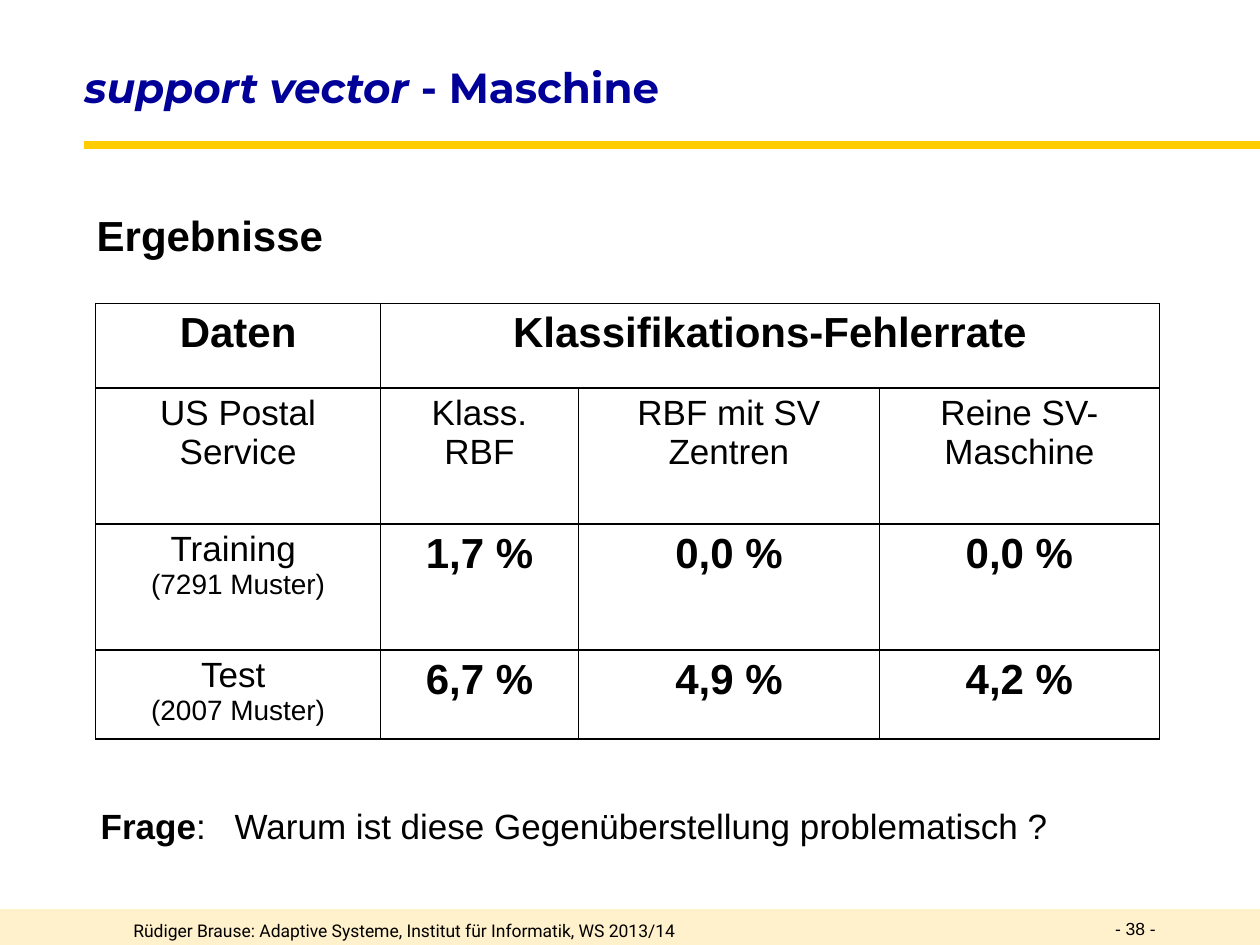
from lxml.etree import SubElement
from pptx import Presentation
from pptx.dml.color import RGBColor
from pptx.enum.shapes import MSO_CONNECTOR, MSO_SHAPE
from pptx.enum.text import PP_ALIGN
from pptx.oxml import parse_xml
from pptx.oxml.ns import nsdecls, qn
from pptx.util import Cm, Pt


def color(code):
    return RGBColor.from_string(code)


def add_text(box, runs, size, face="Arial", tint="000000"):
    """Place a one-paragraph text box; runs are (text, bold, italic)."""
    frame = slide.shapes.add_textbox(*[Cm(n) for n in box]).text_frame
    frame.word_wrap = True
    line = frame.paragraphs[0]
    for words, bold, slant in runs:
        run = line.add_run()
        run.text = words
        font = run.font
        font.name, font.size = face, Pt(size)
        font.bold, font.italic = bold, slant
        font.color.rgb = color(tint)
    return frame


deck = Presentation()
deck.slide_width, deck.slide_height = Cm(25.4), Cm(19.05)
slide = deck.slides.add_slide(deck.slide_layouts[6])

# Footer band, half transparent
band = slide.shapes.add_shape(MSO_SHAPE.RECTANGLE, 0, Cm(18.33), Cm(25.4), Cm(0.72))
band.shadow.inherit = False
band.fill.solid()
band.fill.fore_color.rgb = color("FFE499")
band.line.fill.background()
tone = band.fill._xPr.find(qn("a:solidFill"))[0]
SubElement(tone, qn("a:alpha"), val="50000")

# Rule under the title
rule = slide.shapes.add_connector(
    MSO_CONNECTOR.STRAIGHT, Cm(1.7), Cm(2.92), Cm(25.4), Cm(2.92))
rule.line.color.rgb = color("FFCC00")
rule.line.width = Pt(4.5)
SubElement(rule._element.spPr, qn("a:effectLst"))

# Title and heading
title = add_text((1.7, 1.12, 18.39, 1.4),
                 [("support vector", True, True), (" - Maschine", True, False)],
                 24, "Montserrat", "000099")
title.margin_left = 0
title.word_wrap = False
head = add_text((1.7, 3.53, 23.7, 14.4), [("Ergebnisse", True, False)], 24)
head.margin_top = Cm(0.7)

# Footer text
add_text((2.44, 18.42, 13.77, 0.64),
         [("Rüdiger Brause: Adaptive Systeme, Institut für Informatik, WS 2013/14",
           False, False)], 10, "Roboto")
add_text((22.23, 18.39, 1.9, 0.66), [("- 38 -", False, False)], 10)

# Table of error rates
rows = [
    ["Daten", "Klassifikations-Fehlerrate", "", ""],
    ["US Postal Service", "Klass. RBF", "RBF mit SV Zentren", "Reine SV-Maschine"],
    ["Training \n(7291 Muster)", "1,7 %", "0,0 %", "0,0 %"],
    ["Test \n(2007 Muster)", "6,7 %", "4,9 %", "4,2 %"],
]
wide = [5.74, 3.99, 6.07, 5.64]
high = [1.7, 2.74, 2.54, 1.8]
grid = slide.shapes.add_table(
    4, 4, Cm(1.93), Cm(6.12), Cm(sum(wide)), Cm(sum(high))).table
grid.first_row = grid.horz_banding = False
for col, size in zip(grid.columns, wide):
    col.width = Cm(size)
for row, size in zip(grid.rows, high):
    row.height = Cm(size)
grid.cell(0, 1).merge(grid.cell(0, 3))

for r, row in enumerate(rows):
    for c, words in enumerate(row):
        cell = grid.cell(r, c)
        cell.fill.background()
        props = cell._tc.get_or_add_tcPr()
        for i, side in enumerate("LRTB"):
            props.insert(i, parse_xml(
                f'<a:ln{side} {nsdecls("a")} w="12700"><a:solidFill>'
                f'<a:srgbClr val="000000"/></a:solidFill></a:ln{side}>'))
        if not words:
            continue
        cell.text_frame.text = words
        bold = r == 0 or (r > 1 and c > 0)
        for i, line in enumerate(cell.text_frame.paragraphs):
            line.alignment = PP_ALIGN.CENTER
            font = line.runs[0].font
            font.name, font.bold = "Arial", bold
            font.size = Pt(24 if bold else 16 if i else 20)
            font.color.rgb = color("000000")

# Closing question, with a tab stop after the label
ask = add_text((1.78, 16.1, 22.43, 1.09),
               [("Frage", True, False),
                (":\tWarum ist diese Gegenüberstellung problematisch ?", False, False)],
               20)
tabs = SubElement(ask.paragraphs[0]._p.get_or_add_pPr(), qn("a:tabLst"))
SubElement(tabs, qn("a:tab"), pos=str(Cm(2.7)), algn="l")

deck.save("out.pptx")
